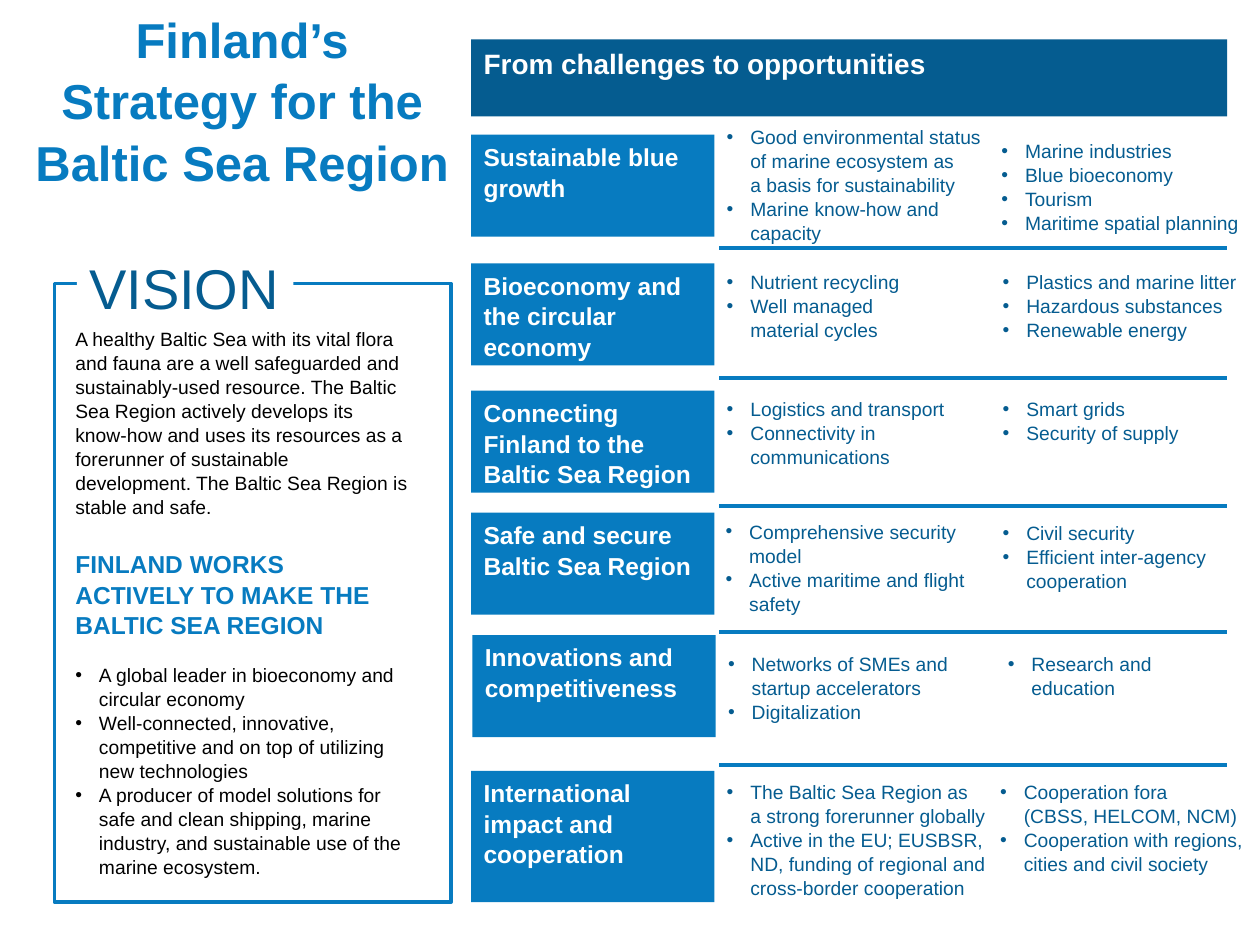
"""Build a one-page summary of Finland's Baltic Sea strategy."""
from copy import deepcopy

from lxml import etree
from pptx import Presentation
from pptx.dml.color import RGBColor
from pptx.enum.shapes import MSO_CONNECTOR, MSO_SHAPE
from pptx.enum.text import MSO_ANCHOR, PP_ALIGN
from pptx.oxml.ns import qn
from pptx.util import Pt

RECT = MSO_SHAPE.RECTANGLE
LINE = MSO_CONNECTOR.STRAIGHT
TOP = MSO_ANCHOR.TOP
LEFT, MID = PP_ALIGN.LEFT, PP_ALIGN.CENTER
COLORS = {"blue": "077BC0", "navy": "055C90", "white": "FFFFFF", "black": "000000"}
FONT = "Arial"
INDENT = 13.5
SPACING = 1.04
THEME_X, THEME_W, THEME_H = 269.3, 139, 58.3
RULE_X, RULE_END = 411.1, 701.3
RULES = [141.8, 216, 289.4, 361.4, 437]

VISION = (
    "A healthy Baltic Sea with its vital flora and fauna are a well safeguarded and "
    "sustainably-used resource. The Baltic Sea Region actively develops its know-how "
    "and uses its resources as a forerunner of sustainable development. "
    "The Baltic Sea Region is stable and safe."
)
CALL = "FINLAND WORKS ACTIVELY TO MAKE THE BALTIC SEA REGION"
GOALS = [
    "A global leader in bioeconomy and circular economy",
    "Well-connected, innovative, competitive and on top of utilizing new technologies",
    "A producer of model solutions for safe and clean shipping, marine industry, "
    "and sustainable use of the marine ecosystem.",
]
THEMES = [
    ("Sustainable blue growth", (THEME_X, 77, THEME_W, THEME_H)),
    ("Bioeconomy and the circular economy", (THEME_X, 150.5, THEME_W, THEME_H)),
    ("Connecting Finland to the Baltic Sea Region", (THEME_X, 223.2, THEME_W, THEME_H)),
    ("Safe and secure Baltic Sea Region", (THEME_X, 293, THEME_W, THEME_H)),
    ("Innovations and competitiveness", (270, 362.9, THEME_W, THEME_H)),
    ("International impact and cooperation", (THEME_X, 440.6, THEME_W, 75)),
]
POINTS = [
    ((408.2, 67.7, 163.4, 74.2), [
        "Good environmental status\nof marine ecosystem as\na basis for sustainability",
        "Marine know-how and\ncapacity"]),
    ((565.2, 75.6, 153, 60.5), [
        "Marine industries", "Blue bioeconomy", "Tourism", "Maritime spatial planning"]),
    ((408.2, 150.5, 131.8, 47.5), ["Nutrient recycling", "Well managed material cycles"]),
    ((565.9, 150.5, 161.3, 47.5), [
        "Plastics and marine litter", "Hazardous substances", "Renewable energy"]),
    ((408.2, 223.2, 167, 47.5), [
        "Logistics and transport", "Connectivity in\ncommunications"]),
    ((565.9, 223.2, 142.6, 33.8), ["Smart grids", "Security of supply"]),
    ((407.5, 293, 157.7, 60.5), [
        "Comprehensive security model", "Active maritime and flight safety"]),
    ((565.9, 293.8, 151.2, 60.5), ["Civil security", "Efficient inter-agency cooperation"]),
    ((409, 368.6, 155.5, 47.5), [
        "Networks of SMEs and startup accelerators", "Digitalization"]),
    ((568.8, 368.6, 145.4, 33.8), ["Research and education"]),
    ((408.2, 442.1, 178.6, 74.2), [
        "The Baltic Sea Region as\na strong forerunner globally",
        "Active in the EU; EUSBSR, ND, funding of regional and\ncross-border cooperation"]),
    ((564.5, 442.1, 161.3, 60.5), [
        "Cooperation fora\n(CBSS, HELCOM, NCM)",
        "Cooperation with regions, cities and civil society"]),
]


def color(name):
    """Return the named colour."""
    return RGBColor.from_string(COLORS[name])


def style(para, size, tint, bold=False, align=LEFT):
    """Format a paragraph, its runs and its line breaks."""
    para.alignment = align
    para.line_spacing = SPACING
    for run in para.runs:
        run.font.name = FONT
        run.font.size = Pt(size)
        run.font.bold = bold
        run.font.color.rgb = color(tint)
    props = para.runs[0]._r.rPr
    for gap in para._p.findall(qn("a:br")):
        gap.insert(0, deepcopy(props))


def bullet(para):
    """Give a paragraph a hanging bullet."""
    props = para._p.get_or_add_pPr()
    props.set("marL", str(Pt(INDENT)))
    props.set("indent", str(-Pt(INDENT)))
    etree.SubElement(props, qn("a:buFont")).set("typeface", FONT)
    etree.SubElement(props, qn("a:buChar")).set("char", "•")


def add_list(frame, items, tint):
    """Fill a text frame with bullets, after any text it holds."""
    for item in items:
        first = frame.paragraphs[0]
        para = frame.add_paragraph() if first.runs else first
        para.text = item
        bullet(para)
        style(para, 11, tint)


def add_text(slide, box):
    """Add a wrapping text box and return its frame."""
    frame = slide.shapes.add_textbox(*map(Pt, box)).text_frame
    frame.word_wrap = True
    return frame


def add_panel(slide, box, fill, edge=None):
    """Add a flat rectangle."""
    panel = slide.shapes.add_shape(RECT, *map(Pt, box))
    panel.shadow.inherit = False
    panel.fill.solid()
    panel.fill.fore_color.rgb = color(fill)
    if edge:
        panel.line.color.rgb = color(edge)
        panel.line.width = Pt(2)
    else:
        panel.line.fill.background()
    return panel


def add_label(slide, box, text, fill, size, tint="white", bold=True):
    """Add a filled rectangle with text at its top left."""
    frame = add_panel(slide, box, fill).text_frame
    frame.text = text
    frame.vertical_anchor = TOP
    frame.word_wrap = True
    style(frame.paragraphs[0], size, tint, bold)
    return frame


def add_rule(slide, y):
    """Add a horizontal divider."""
    rule = slide.shapes.add_connector(LINE, Pt(RULE_X), Pt(y), Pt(RULE_END), Pt(y))
    rule.line.color.rgb = color("blue")
    rule.line.width = Pt(2.25)
    etree.SubElement(rule._element.spPr, qn("a:effectLst"))


def add_vision(slide):
    """Add the framed vision column."""
    add_panel(slide, (31, 162, 226.8, 353.5), "white", "blue")
    frame = add_text(slide, (36, 182.9, 204.5, 325.4))
    frame.text = VISION
    style(frame.paragraphs[0], 11, "black")
    call = frame.add_paragraph()
    call.text = CALL
    call.space_before = Pt(17)
    call.space_after = Pt(13)
    style(call, 14, "blue", True)
    add_list(frame, GOALS, "black")
    title = add_label(slide, (43.9, 139.7, 123.8, 46), "VISION", "white", 32, "navy", False)
    title.word_wrap = False


def main():
    """Build and save the slide."""
    deck = Presentation()
    deck.slide_width, deck.slide_height = Pt(720), Pt(540)
    slide = deck.slides.add_slide(deck.slide_layouts[6])
    title = add_text(slide, (13, 0.7, 250.6, 153.4))
    title.text = "Finland’s Strategy for the Baltic Sea Region"
    style(title.paragraphs[0], 28, "blue", True, MID)
    add_vision(slide)
    add_label(slide, (THEME_X, 22.5, 432, 44), "From challenges to opportunities", "navy", 16)
    for text, box in THEMES:
        add_label(slide, box, text, "blue", 14)
    for y in RULES:
        add_rule(slide, y)
    for box, items in POINTS:
        add_list(add_text(slide, box), items, "navy")
    deck.save("out.pptx")


if __name__ == "__main__":
    main()
